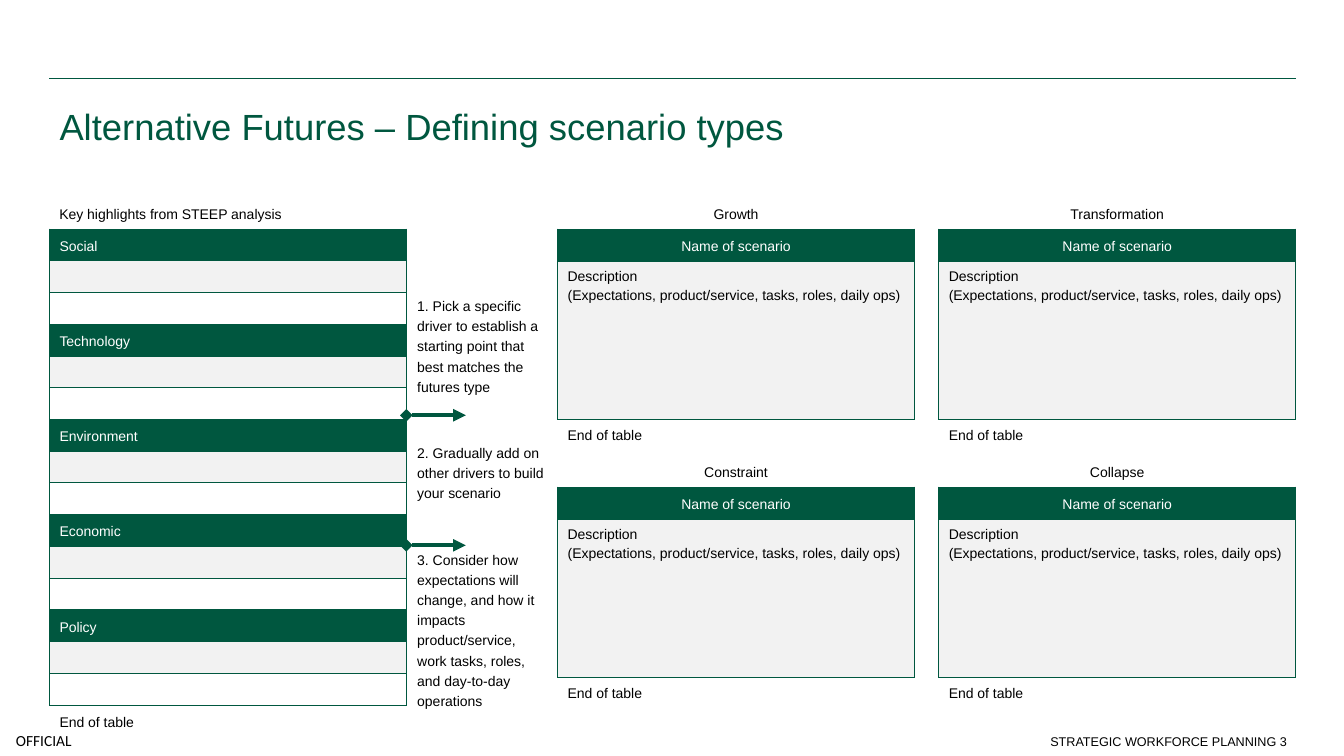
import pptx
import pptx.dml.color
import pptx.enum.shapes
import pptx.enum.text
import pptx.oxml.ns
import pptx.util
import lxml.etree

Inches = pptx.util.Inches
Pt = pptx.util.Pt
ALIGN = pptx.enum.text.PP_ALIGN
ANCHOR = pptx.enum.text.MSO_ANCHOR

COLOURS = {"green": "00573F", "grey": "F2F2F2", "white": "FFFFFF", "black": "000000"}
LEFT, RIGHT = 0.49, 12.85
TABLE_WIDTH = 3.54
TABLE_TOP = 2.27
LABEL_TOP, LABEL_HEIGHT = 1.96, 0.31
STEEP_HEIGHT = 5.04
SCENARIO_ROWS = (0.32, 1.57, 0.29)

DRIVERS = ("Social", "Technology", "Environment", "Economic", "Policy")
STEPS = (
    "1. Pick a specific driver to establish a starting point that best matches the futures type",
    "2. Gradually add on other drivers to build your scenario",
    "3. Consider how expectations will change, and how it impacts product/service, "
    "work tasks, roles, and day-to-day operations",
)
DESCRIPTION = "Description\v(Expectations, product/service, tasks, roles, daily ops)"
SCENARIOS = (("Growth", "Transformation"), ("Constraint", "Collapse"))
SCENARIO_LEFTS = (5.53, 9.31)
SCENARIO_PITCH = 2.56


def colour(name):
    return pptx.dml.color.RGBColor.from_string(COLOURS[name])


def add_element(parent, tag, **attributes):
    return lxml.etree.SubElement(parent, pptx.oxml.ns.qn(tag), attributes)


class SlideBuilder:
    def __init__(self, page, font="Arial", size=10, spacing=1.2):
        self.page = page
        self.font = font
        self.size = size
        self.spacing = spacing

    def style(self, para, shade="black", size=None, font=None, align=ALIGN.LEFT):
        para.alignment = align
        para.line_spacing = self.spacing
        para.font.name = font or self.font
        para.font.size = Pt(size or self.size)
        para.font.color.rgb = colour(shade)

    def title(self, text, left, top, width, height):
        box = self.page.shapes.title
        box.left, box.top, box.width, box.height = map(Inches, (left, top, width, height))
        box.text_frame.text = text
        box.text_frame.vertical_anchor = ANCHOR.TOP
        box.text_frame.auto_size = pptx.enum.text.MSO_AUTO_SIZE.NONE
        self.style(box.text_frame.paragraphs[0], "green", 26)

    def text(self, texts, left, top, width, height, anchor=ANCHOR.TOP, gap=0, **style):
        box = self.page.shapes.add_textbox(*map(Inches, (left, top, width, height)))
        frame = box.text_frame
        frame.word_wrap = True
        frame.vertical_anchor = anchor
        frame.text = "\n".join(texts)
        for para in frame.paragraphs:
            self.style(para, **style)
            para.space_after = Pt(gap)
        return frame

    def line(self, start, end, width, arrow=False):
        connector = self.page.shapes.add_connector(
            pptx.enum.shapes.MSO_CONNECTOR.STRAIGHT, *map(Inches, start + end))
        connector.line.color.rgb = colour("green")
        connector.line.width = Pt(width)
        if arrow:
            outline = connector.line._get_or_add_ln()
            add_element(outline, "a:headEnd", type="diamond")
            add_element(outline, "a:tailEnd", type="triangle")
        add_element(connector._element.spPr, "a:effectLst")

    def borders(self, cell, sides):
        properties = cell._tc.get_or_add_tcPr()
        for side in "LRTB":
            edge = add_element(properties, "a:ln" + side, w=str(Pt(0.5)))
            if side in sides:
                fill = add_element(edge, "a:solidFill")
                add_element(fill, "a:srgbClr", val=COLOURS["green"])
            else:
                add_element(edge, "a:noFill")

    def table(self, left, top, heights, rows):
        """Each row is (text, fill or None, text colour, alignment, anchor)."""
        frame = self.page.shapes.add_table(
            len(rows), 1, *map(Inches, (left, top, TABLE_WIDTH, sum(heights))))
        table = frame.table
        table.first_row = table.horz_banding = False
        for index, (text, fill, shade, align, anchor) in enumerate(rows):
            table.rows[index].height = Inches(heights[index])
            cell = table.cell(index, 0)
            cell.text = text
            cell.vertical_anchor = anchor
            para = cell.text_frame.paragraphs[0]
            self.style(para, shade, align=align)
            if not text:
                add_element(para._p, "a:endParaRPr", sz=str(self.size * 100))
            self.borders(cell, "T" if index == len(rows) - 1 else "LRTB")
            if fill:
                cell.fill.solid()
                cell.fill.fore_color.rgb = colour(fill)
            else:
                cell.fill.background()


def main():
    deck = pptx.Presentation()
    deck.slide_width, deck.slide_height = Inches(13.33), Inches(7.5)
    page = deck.slides.add_slide(deck.slide_layouts[5])
    builder = SlideBuilder(page)

    # Header
    builder.line((LEFT, 0.78), (RIGHT, 0.78), 1.25)
    builder.title("Alternative Futures – Defining scenario types",
                  LEFT, 0.9, RIGHT - LEFT, 1.02)

    # STEEP analysis
    builder.text(["Key highlights from STEEP analysis"],
                 LEFT, LABEL_TOP, TABLE_WIDTH, LABEL_HEIGHT)
    end_row = ("End of table", None, "black", ALIGN.LEFT, ANCHOR.MIDDLE)
    steep_rows = []
    for driver in DRIVERS:
        for text, fill in ((driver, "green"), ("", "grey"), ("", "white")):
            steep_rows.append((text, fill, "white", ALIGN.LEFT, ANCHOR.MIDDLE))
    steep_rows.append(end_row)
    row_height = STEEP_HEIGHT / len(steep_rows)
    builder.table(LEFT, TABLE_TOP, [row_height] * len(steep_rows), steep_rows)

    # Steps between the analysis and the scenarios
    for arrow_top in (4.12, 5.41):
        builder.line((LEFT + TABLE_WIDTH, arrow_top), (4.62, arrow_top), 3, arrow=True)
    builder.text(STEPS, 4.04, 2.87, 1.5, 4.13, gap=33)

    # Scenario grid
    scenario_rows = (
        ("Name of scenario", "green", "white", ALIGN.CENTER, ANCHOR.MIDDLE),
        (DESCRIPTION, "grey", "black", ALIGN.LEFT, ANCHOR.TOP),
        end_row,
    )
    for row, names in enumerate(SCENARIOS):
        offset = row * SCENARIO_PITCH
        for left, name in zip(SCENARIO_LEFTS, names):
            builder.text([name], left, LABEL_TOP + offset, TABLE_WIDTH, LABEL_HEIGHT,
                         align=ALIGN.CENTER)
            builder.table(left, TABLE_TOP + offset, SCENARIO_ROWS, scenario_rows)

    # Footer with security marking
    marking = builder.text(["OFFICIAL"], 0, 7.19, 0.87, 0.31, ANCHOR.MIDDLE,
                           size=11, font="Calibri", align=ALIGN.CENTER)
    marking.margin_left = marking.margin_right = 0
    marking.margin_top = marking.margin_bottom = 0
    footer = builder.text(["STRATEGIC WORKFORCE PLANNING 3"], 6.84, 7.09, 6.02, 0.39,
                          ANCHOR.BOTTOM, size=9, align=ALIGN.RIGHT)
    for frame in (marking, footer):
        frame.paragraphs[0].line_spacing = 1

    deck.save("out.pptx")


if __name__ == "__main__":
    main()
